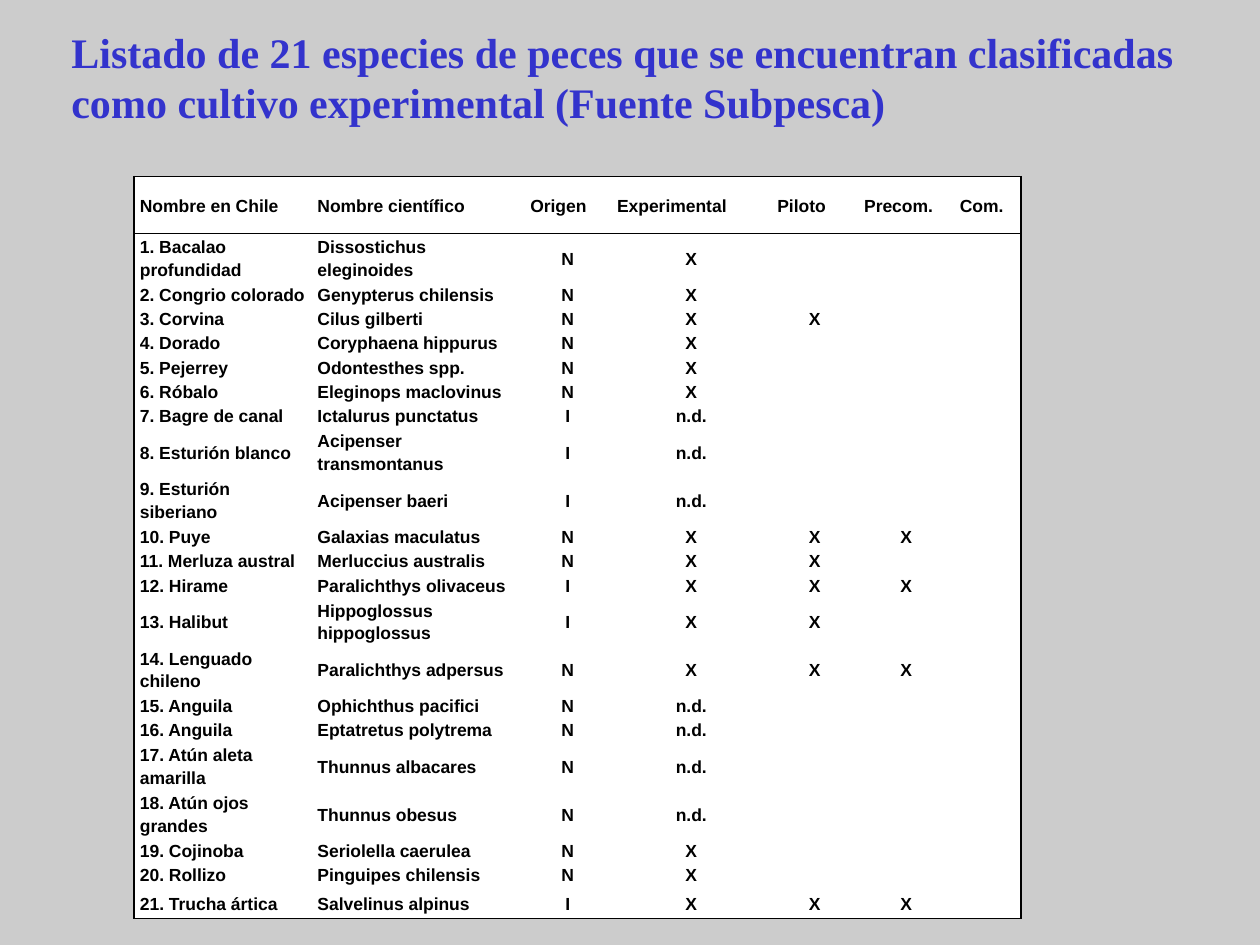
from lxml import etree
from pptx import Presentation, util as u
from pptx.dml.color import RGBColor
from pptx.enum import text
from pptx.oxml.ns import qn

TITLE = ("Listado de 21 especies de peces que se encuentran clasificadas",
         "como cultivo experimental (Fuente Subpesca)")
HEADER = ("Nombre en Chile", "Nombre científico", "Origen", "Experimental",
          "Piloto", "Precom.", "Com.")
# common name, scientific name, origin, then the stages reached
SPECIES = [
    ("Bacalao profundidad", "Dissostichus eleginoides", "N", "X"),
    ("Congrio colorado", "Genypterus chilensis", "N", "X"),
    ("Corvina", "Cilus gilberti", "N", "X", "X"),
    ("Dorado", "Coryphaena hippurus", "N", "X"),
    ("Pejerrey", "Odontesthes spp.", "N", "X"),
    ("Róbalo", "Eleginops maclovinus", "N", "X"),
    ("Bagre de canal", "Ictalurus punctatus", "I", "n.d."),
    ("Esturión blanco", "Acipenser transmontanus", "I", "n.d."),
    ("Esturión siberiano", "Acipenser baeri", "I", "n.d."),
    ("Puye", "Galaxias maculatus", "N", "X", "X", "X"),
    ("Merluza austral", "Merluccius australis", "N", "X", "X"),
    ("Hirame", "Paralichthys olivaceus", "I", "X", "X", "X"),
    ("Halibut", "Hippoglossus hippoglossus", "I", "X", "X"),
    ("Lenguado chileno", "Paralichthys adpersus", "N", "X", "X", "X"),
    ("Anguila", "Ophichthus pacifici", "N", "n.d."),
    ("Anguila", "Eptatretus polytrema", "N", "n.d."),
    ("Atún aleta amarilla", "Thunnus albacares", "N", "n.d."),
    ("Atún ojos grandes", "Thunnus obesus", "N", "n.d."),
    ("Cojinoba", "Seriolella caerulea", "N", "X"),
    ("Rollizo", "Pinguipes chilensis", "N", "X"),
    ("Trucha ártica", "Salvelinus alpinus", "I", "X", "X", "X"),
]
COL_WIDTHS = (3.58, 4.29, 1.75, 3.23, 1.75, 1.93, 1.35)
ROW_HEIGHTS = {"header": 1.15, "one": 0.49, "two": 0.97, "last": 0.65}
FITS = (19, 22)  # characters that fit on one line in the two name columns
THEME = {
    "background": RGBColor(0xCC, 0xCC, 0xCC),
    "cell": RGBColor(0xFF, 0xFF, 0xFF),
    "border": "000000",
    "title": {"name": "Times New Roman", "size": u.Pt(24), "bold": True,
              "color": RGBColor(0x33, 0x33, 0xCC)},
    "body": {"name": "Arial", "size": u.Pt(10), "bold": True,
             "color": RGBColor(0, 0, 0)},
}
NO_STYLE = "{2D5ABB26-0587-4C30-8999-92F81FD0307C}"


def set_attrs(obj, values):
    for name, value in values.items():
        setattr(obj, name, value)


def add_text(p, words, style):
    r = p.add_run()
    r.text = words
    set_attrs(r.font, {k: v for k, v in style.items() if k != "color"})
    r.font.color.rgb = style["color"]


def add_borders(cell, sides):
    """Draw the given sides (from L, R, T, B in that order) and hide the rest."""
    tc_pr = cell._tc.get_or_add_tcPr()
    for i, side in enumerate("LRTB"):
        ln = etree.Element(qn(f"a:ln{side}"), w=str(u.Pt(1)))
        if side in sides:
            fill = etree.SubElement(ln, qn("a:solidFill"))
            etree.SubElement(fill, qn("a:srgbClr"), val=THEME["border"])
        else:
            etree.SubElement(ln, qn("a:noFill"))
        tc_pr.insert(i, ln)


def row_height(i, row, last):
    if i in (0, last):
        return ROW_HEIGHTS["last" if i else "header"]
    wraps = any(len(words) > limit for words, limit in zip(row, FITS))
    return ROW_HEIGHTS["two" if wraps else "one"]


def fill_cell(cell, words, centred, sides):
    set_attrs(cell, {"margin_left": u.Cm(0.12), "margin_right": u.Cm(0.12),
                     "margin_top": 0, "margin_bottom": 0,
                     "vertical_anchor": text.MSO_ANCHOR.MIDDLE})
    cell.fill.solid()
    cell.fill.fore_color.rgb = THEME["cell"]
    add_borders(cell, sides)
    p = cell.text_frame.paragraphs[0]
    if words:
        p.line_spacing = 1.15
        p.alignment = text.PP_ALIGN.CENTER if centred else text.PP_ALIGN.LEFT
        add_text(p, words, THEME["body"])
    else:  # keeps an empty cell from stretching its row
        size = str(int(THEME["body"]["size"].pt * 100))
        etree.SubElement(p._p, qn("a:endParaRPr"), sz=size)


def add_species_table(s):
    rows = [HEADER] + [(f"{n}. {sp[0]}", *sp[1:])
                       for n, sp in enumerate(SPECIES, 1)]
    last, end = len(rows) - 1, len(HEADER) - 1
    heights = [row_height(i, row, last) for i, row in enumerate(rows)]
    frame = s.shapes.add_table(len(rows), len(HEADER), u.Cm(2.7), u.Cm(3.56),
                               u.Cm(sum(COL_WIDTHS)), u.Cm(sum(heights)))
    table = frame.table
    set_attrs(table, {"first_row": False, "horz_banding": False})
    table._tbl.tblPr.find(qn("a:tableStyleId")).text = NO_STYLE
    for col, width in zip(table.columns, COL_WIDTHS):
        col.width = u.Cm(width)
    for i, (row, height) in enumerate(zip(rows, heights)):
        table.rows[i].height = u.Cm(height)
        for j in range(len(HEADER)):
            edges = {"L": j == 0, "R": j == end, "T": i < 2,
                     "B": i in (0, last)}
            fill_cell(table.cell(i, j), row[j] if j < len(row) else "",
                      i > 0 and j > 1, [k for k, on in edges.items() if on])


def add_title(s):
    sp = s.shapes.add_textbox(u.Cm(1.19), u.Cm(0.41), u.Cm(23.16), u.Cm(3.33))
    tf = sp.text_frame
    set_attrs(tf, {"word_wrap": False, "vertical_anchor": text.MSO_ANCHOR.TOP})
    for i, line in enumerate(TITLE):
        p = tf.add_paragraph() if i else tf.paragraphs[0]
        add_text(p, line, THEME["title"])


def main():
    prs = Presentation()
    set_attrs(prs, {"slide_width": u.Cm(25.4), "slide_height": u.Cm(19.05)})
    s = prs.slides.add_slide(prs.slide_layouts[6])
    s.background.fill.solid()
    s.background.fill.fore_color.rgb = THEME["background"]
    add_species_table(s)
    add_title(s)
    prs.save("out.pptx")


if __name__ == "__main__":
    main()
